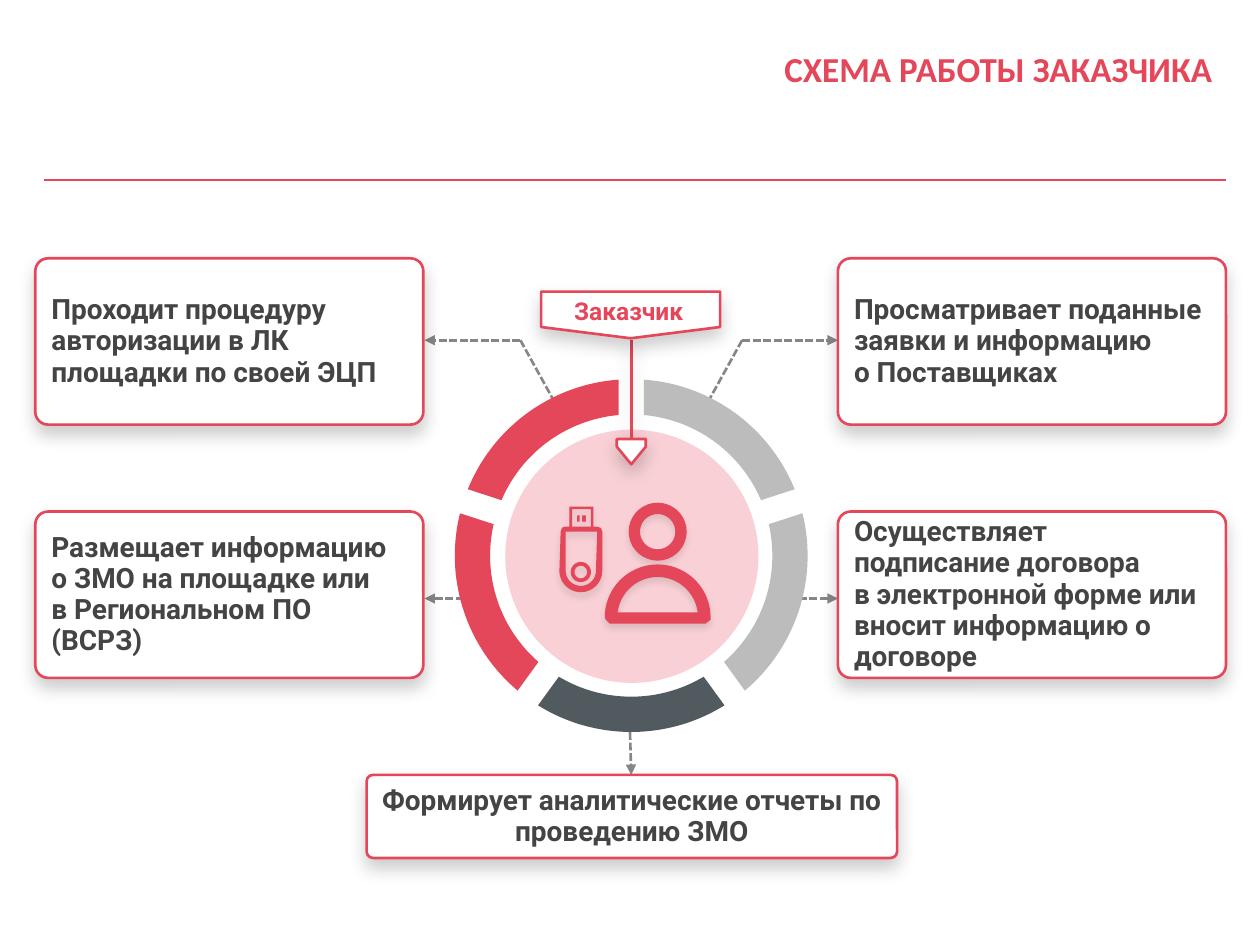
from math import asin, cos, degrees, radians, sin

from lxml.etree import SubElement
from pptx import Presentation
from pptx.dml.color import RGBColor as Rgb
from pptx.enum.dml import MSO_LINE as Dash
from pptx.enum.shapes import MSO_CONNECTOR as Conn, MSO_SHAPE as Kind
from pptx.enum.text import MSO_ANCHOR as Anchor, PP_ALIGN as Align
from pptx.oxml.ns import qn
from pptx.util import Inches, Pt

HUES = {"red": "E4465A", "pink": "F8D0D5", "light": "BCBCBC", "slate": "515A5F",
        "gray": "868686", "text": "444444", "white": "FFFFFF", "black": "000000"}
DEEP = (20, 10, 5)
SOFT = (10, 4, 3)


def arc(x, y, r, start, end):
    steps = [radians(start + (end - start) * i / 36) for i in range(37)]
    return [(x + r * cos(a), y + r * sin(a)) for a in steps]


def style(shape, fill=None, line=None, shade=None):
    if fill:
        shape.fill.solid()
        shape.fill.fore_color.rgb = Rgb.from_string(HUES[fill])
    if line:
        shape.line.color.rgb = Rgb.from_string(HUES[line])
        shape.line.width = Pt(1.5)
    else:
        shape.line.fill.background()
    glow = SubElement(shape._element.spPr, qn("a:effectLst"))
    if shade:
        alpha, blur, dist = shade
        drop = SubElement(glow, qn("a:outerShdw"), blurRad=str(Pt(blur)),
                          dist=str(Pt(dist)), dir="5400000", algn="t", rotWithShape="0")
        tone = SubElement(drop, qn("a:srgbClr"), val=HUES["black"])
        SubElement(tone, qn("a:alpha"), val=str(alpha * 1000))


deck = Presentation()
deck.slide_width, deck.slide_height = Inches(10), Inches(7.5)
slide = deck.slides.add_slide(deck.slide_layouts[6])
shapes = slide.shapes

mid_x, mid_y = 5.01, 4.41
disc = shapes.add_shape(Kind.OVAL, Inches(4.01), Inches(3.41), Inches(2.01), Inches(2.01))
style(disc, "pink")

lines = [
    (0.35, 1.43, 9.73, 1.43, "red", False, None),
    (5.01, 2.7, 5.01, 3.49, "red", False, DEEP),
    (5.89, 2.7, 6.65, 2.7, "gray", True, None),
    (5.89, 2.7, 5.63, 3.17, "gray", False, None),
    (6.34, 4.75, 6.65, 4.75, "gray", True, None),
    (5, 5.81, 5.01, 6.15, "gray", True, None),
    (4.13, 2.7, 3.37, 2.7, "gray", True, None),
    (4.13, 2.7, 4.39, 3.17, "gray", False, None),
    (3.68, 4.75, 3.37, 4.75, "gray", True, None),
]
for x1, y1, x2, y2, hue, arrow, shade in lines:
    link = shapes.add_connector(Conn.STRAIGHT, Inches(x1), Inches(y1), Inches(x2), Inches(y2))
    style(link, line=hue, shade=shade)
    if hue == "gray":
        link.line.dash_style = Dash.SQUARE_DOT
    if arrow:
        SubElement(link.line._get_or_add_ln(), qn("a:tailEnd"), type="triangle")

texts = []
cards = [
    (0.28, 2.05, 3.08, 1.32, Align.LEFT,
     "Проходит процедуру авторизации в ЛК площадки по своей ЭЦП"),
    (0.28, 4.06, 3.08, 1.32, Align.LEFT,
     "Размещает информацию о ЗМО на площадке или\nв Региональном ПО (ВСРЗ)"),
    (6.65, 2.05, 3.08, 1.32, Align.LEFT,
     "Просматривает поданные заявки и информацию\nо Поставщиках"),
    (6.65, 4.06, 3.08, 1.32, Align.LEFT,
     "Осуществляет подписание договора\nв электронной форме или вносит информацию о договоре"),
    (2.91, 6.15, 4.21, 0.66, Align.CENTER,
     "Формирует аналитические отчеты по проведению ЗМО"),
]
for x, y, w, h, side, words in cards:
    card = shapes.add_shape(Kind.ROUNDED_RECTANGLE, Inches(x), Inches(y), Inches(w), Inches(h))
    card.adjustments[0] = 0.077
    style(card, "white", "red", DEEP)
    texts.append((card, words, 16, "Roboto", "text", side, 0.93, Anchor.MIDDLE))

person = [
    arc(5.22, 4.9, 0.42, 180, 360) + [(5.64, 4.92), (5.6, 4.95), (4.84, 4.95), (4.81, 4.92)],
    arc(5.22, 4.9, 0.32, 187, 353),
    arc(5.22, 4.22, 0.23, 0, 360),
    arc(5.22, 4.22, 0.14, 0, 360),
]
token = [
    arc(4.61, 4.53, 0.17, 0, 180) + [
        (4.45, 4.22), (4.46, 4.19), (4.48, 4.18), (4.52, 4.18), (4.52, 4.02),
        (4.71, 4.02), (4.71, 4.18), (4.74, 4.18), (4.77, 4.19), (4.78, 4.22)],
    arc(4.61, 4.53, 0.12, 0, 180) + [(4.49, 4.22), (4.74, 4.22)],
    arc(4.61, 4.54, 0.08, 0, 360),
    arc(4.61, 4.54, 0.05, 0, 360),
]
for x1, y1, x2, y2 in [(4.54, 4.04, 4.69, 4.18), (4.58, 4.09, 4.6, 4.14), (4.62, 4.09, 4.65, 4.14)]:
    token.append([(x1, y1), (x2, y1), (x2, y2), (x1, y2)])
forms = [(person, "red", SOFT), (token, "red", SOFT)]

outer, inner, gap = 1.4, 1.12, 0.1
for i, hue in enumerate(["light", "light", "slate", "red", "red"]):
    start = 72 * i - 90
    out, low = degrees(asin(gap / outer)), degrees(asin(gap / inner))
    band = arc(mid_x, mid_y, outer, start + out, start + 72 - out)
    band += arc(mid_x, mid_y, inner, start + 72 - low, start + low)
    forms.append(([band], hue, None))

for rings, hue, shade in forms:
    rings = [[(Inches(x), Inches(y)) for x, y in ring] for ring in rings]
    pen = shapes.build_freeform(*rings[0][0], scale=1.0)
    for i, ring in enumerate(rings):
        if i:
            pen.move_to(*ring[0])
        pen.add_line_segments(ring[1:], close=True)
    style(pen.convert_to_shape(), hue, shade=shade)

for x, y, w, h, bend in [(4.82, 1.79, 0.37, 1.42, 0.241), (4.91, 3.47, 0.2, 0.23, 0.696)]:
    flag = shapes.add_shape(Kind.PENTAGON, Inches(x), Inches(y), Inches(w), Inches(h))
    flag.rotation = 90
    flag.adjustments[0] = bend
    style(flag, "white", "red", DEEP)

title = shapes.add_textbox(Inches(3.58), Inches(0.37), Inches(6.14), Inches(1.02))
label = shapes.add_textbox(Inches(4.29), Inches(2.3), Inches(1.4), Inches(0.34))
texts += [
    (title, "СХЕМА РАБОТЫ ЗАКАЗЧИКА", 20, "Calibri", "red", Align.RIGHT, 0.87, Anchor.TOP),
    (label, "Заказчик", 14, "Roboto", "red", Align.CENTER, 1.0, Anchor.TOP),
]
for box, words, size, face, hue, side, space, hold in texts:
    frame = box.text_frame
    frame.word_wrap = True
    frame.vertical_anchor = hold
    para = frame.paragraphs[0]
    para.alignment = side
    para.line_spacing = space
    for i, part in enumerate(words.split("\n")):
        if i:
            para.add_line_break()
        run = para.add_run()
        run.text = part
        run.font.size = Pt(size)
        run.font.name = face
        run.font.bold = True
        run.font.color.rgb = Rgb.from_string(HUES[hue])

deck.save("out.pptx")
